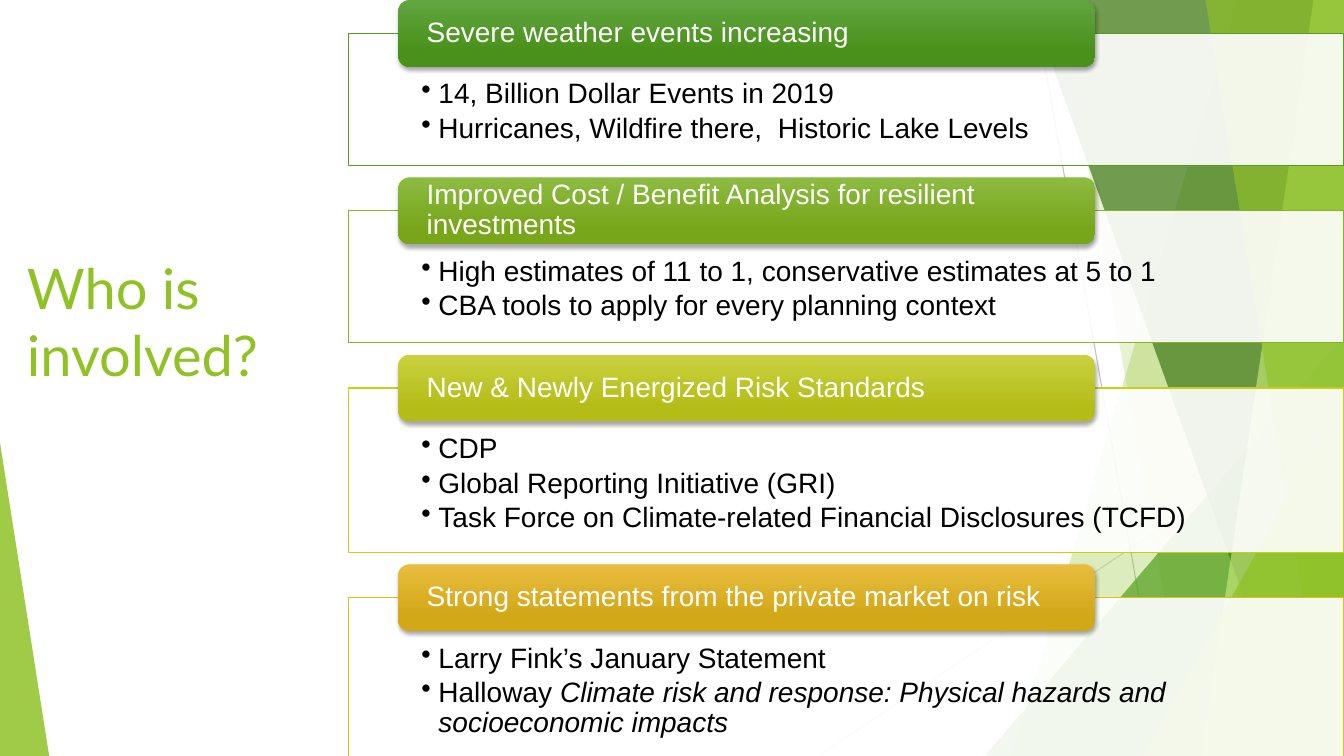
from dataclasses import dataclass

from lxml.etree import SubElement
from pptx import Presentation
from pptx.dml.color import RGBColor
from pptx.enum.shapes import MSO_CONNECTOR, MSO_SHAPE
from pptx.enum.text import MSO_ANCHOR, PP_ALIGN
from pptx.oxml.ns import qn
from pptx.util import Cm, Pt


@dataclass(frozen=True)
class Theme:
    title_font: str = "Lato"
    body_font: str = "Arial"
    title_size: int = 40
    body_size: int = 20
    green: str = "90C226"
    leaf: str = "54A021"
    forest: str = "3F7819"
    lime: str = "C0E474"
    white: str = "FFFFFF"
    black: str = "000000"
    grey: str = "BFBFBF"
    pale_grey: str = "D9D9D9"


THEME = Theme()
SLIDE_WIDTH, SLIDE_HEIGHT = 33.87, 19.05

# Topic: heading, bullets (plain text, italic text), body height in cm,
# border colour, heading gradient from top to bottom
TOPICS = [
    ("Severe weather events increasing",
     [("14, Billion Dollar Events in 2019", ""),
      ("Hurricanes, Wildfire there,  Historic Lake Levels", "")],
     3.33, "52A01E", ("61A540", "4A911B")),
    ("Improved Cost / Benefit Analysis for resilient investments",
     [("High estimates of 11 to 1, conservative estimates at 5 to 1", ""),
      ("CBA tools to apply for every planning context", "")],
     3.33, "84B71E", ("8CBB41", "78A61B")),
    ("New & Newly Energized Risk Standards",
     [("CDP", ""),
      ("Global Reporting Initiative (GRI)", ""),
      ("Task Force on Climate-related Financial Disclosures (TCFD)", "")],
     4.14, "C6D01B", ("C9D23E", "B4BD18")),
    ("Strong statements from the private market on risk",
     [("Larry Fink’s January Statement", ""),
      ("Halloway ", "Climate risk and response: Physical hazards and socioeconomic impacts")],
     4.04, "E7B91A", ("E8BC3E", "D2A817")),
]


def color(value):
    return RGBColor.from_string(value)


def fill_solid(shape, value, opacity=100):
    shape.shadow.inherit = False
    shape.fill.solid()
    shape.fill.fore_color.rgb = color(value)
    if opacity < 100:
        solid = shape._element.spPr.find(qn("a:solidFill"))
        SubElement(solid[0], qn("a:alpha"), val=str(opacity * 1000))


def format_paragraph(paragraph, font_name, size, value):
    paragraph.alignment = PP_ALIGN.LEFT
    paragraph.font.name = font_name
    paragraph.font.size = Pt(size)
    paragraph.font.color.rgb = color(value)


def set_text_frame(shape, anchor, sides, top=0, bottom=0):
    frame = shape.text_frame
    frame.word_wrap = True
    frame.vertical_anchor = anchor
    frame.margin_left = frame.margin_right = Cm(sides)
    frame.margin_top, frame.margin_bottom = Cm(top), Cm(bottom)
    return frame


# Background facets
def add_thin_line(slide, start, end, value):
    line = slide.shapes.add_connector(
        MSO_CONNECTOR.STRAIGHT, *(Cm(length) for length in start + end))
    line.line.color.rgb = color(value)
    line.line.width = Pt(0.75)
    SubElement(line._element.spPr, qn("a:effectLst"))


def add_facet(slide, top_x, bottom_x, value, opacity):
    """Full-height facet between a slanted edge and the right slide edge."""
    builder = slide.shapes.build_freeform(Cm(top_x), 0, scale=1.0)
    builder.add_line_segments([
        (Cm(SLIDE_WIDTH), 0),
        (Cm(SLIDE_WIDTH), Cm(SLIDE_HEIGHT)),
        (Cm(bottom_x), Cm(SLIDE_HEIGHT)),
    ], close=True)
    shape = builder.convert_to_shape()
    fill_solid(shape, value, opacity)
    shape.line.fill.background()


def add_corner(slide, width, height, apex, value, opacity):
    """Triangle in a bottom corner: apex 0 is the left one, 1 the right one."""
    left = apex * (SLIDE_WIDTH - width)
    shape = slide.shapes.add_shape(
        MSO_SHAPE.ISOSCELES_TRIANGLE, Cm(left), Cm(SLIDE_HEIGHT - height),
        Cm(width), Cm(height))
    shape.adjustments[0] = apex
    fill_solid(shape, value, opacity)
    shape.line.fill.background()


def add_background(slide):
    add_thin_line(slide, (26.04, 0), (29.41, SLIDE_HEIGHT), THEME.grey)
    add_thin_line(slide, (SLIDE_WIDTH, 10.24), (20.62, SLIDE_HEIGHT), THEME.pale_grey)
    add_facet(slide, 31.19, 25.5, THEME.green, 30)
    add_facet(slide, 26.67, 30.05, THEME.green, 20)
    add_corner(slide, 9.05, 10.59, 1, THEME.leaf, 72)
    add_facet(slide, 25.93, 32.79, THEME.forest, 70)
    add_facet(slide, 33.1, 30.28, THEME.lime, 70)
    add_facet(slide, 30.38, 33.48, THEME.green, 65)
    add_corner(slide, 5.07, 9.07, 1, THEME.green, 80)
    add_corner(slide, 1.24, 7.9, 0, THEME.green, 85)


# Title
def place_title(slide, left, top, width, height):
    title = slide.shapes.title
    title.left, title.top = Cm(left), Cm(top)
    title.width, title.height = Cm(width), Cm(height)
    frame = set_text_frame(title, MSO_ANCHOR.TOP, 0.25, 0.13, 0.13)
    frame.text = "Who is involved?"
    format_paragraph(frame.paragraphs[0], THEME.title_font, THEME.title_size, THEME.green)


# Topic body: bordered box with bullets
def add_bullet(paragraph, plain, italic):
    properties = paragraph._p.get_or_add_pPr()
    properties.set("marL", str(Cm(0.43)))
    properties.set("indent", str(-Cm(0.43)))
    bullet_color = SubElement(properties, qn("a:buClr"))
    SubElement(bullet_color, qn("a:srgbClr"), val=THEME.black)
    SubElement(properties, qn("a:buChar"), char="•")
    paragraph.line_spacing = 0.9
    format_paragraph(paragraph, THEME.body_font, THEME.body_size, THEME.black)
    paragraph.add_run().text = plain
    if italic:
        run = paragraph.add_run()
        run.text = italic
        run.font.italic = True


def add_body(slide, left, top, width, height, bullets, border):
    body = slide.shapes.add_shape(
        MSO_SHAPE.RECTANGLE, Cm(left), Cm(top), Cm(width), Cm(height))
    fill_solid(body, THEME.white, 90)
    body.line.color.rgb = color(border)
    body.line.width = Pt(1)
    frame = set_text_frame(body, MSO_ANCHOR.TOP, 1.83, 1.17, 0.41)
    for index, (plain, italic) in enumerate(bullets):
        paragraph = frame.add_paragraph() if index else frame.paragraphs[0]
        add_bullet(paragraph, plain, italic)
        if index:
            paragraph.space_before = Pt(3)


# Topic heading: rounded bar with gradient and soft shadow
def add_heading(slide, left, top, width, height, text, gradient):
    heading = slide.shapes.add_shape(
        MSO_SHAPE.ROUNDED_RECTANGLE, Cm(left), Cm(top), Cm(width), Cm(height))
    heading.line.fill.background()
    heading.fill.gradient()
    heading.fill.gradient_angle = 270
    for stop, position, value in zip(heading.fill.gradient_stops, (0, 0.78), gradient):
        stop.position = position
        stop.color.rgb = color(value)
    heading.shadow.inherit = False
    effects = heading._element.spPr.find(qn("a:effectLst"))
    shadow = SubElement(effects, qn("a:outerShdw"), blurRad=str(Pt(3)),
                        dist=str(Pt(2)), dir="5400000", rotWithShape="0")
    shadow_color = SubElement(shadow, qn("a:srgbClr"), val=THEME.black)
    SubElement(shadow_color, qn("a:alpha"), val="35000")
    frame = set_text_frame(heading, MSO_ANCHOR.MIDDLE, 0.63)
    frame.text = text
    frame.paragraphs[0].line_spacing = 0.9
    format_paragraph(frame.paragraphs[0], THEME.body_font, THEME.body_size, THEME.white)


def add_topics(slide, left, top, width):
    heading_height, gap = 1.68, 1.14
    body_top = top + heading_height / 2
    for text, bullets, height, border, gradient in TOPICS:
        add_body(slide, left, body_top, width, height, bullets, border)
        add_heading(slide, left + 1.25, body_top - heading_height / 2,
                    0.7 * width, heading_height, text, gradient)
        body_top += height + gap


def main():
    presentation = Presentation()
    presentation.slide_width, presentation.slide_height = Cm(SLIDE_WIDTH), Cm(SLIDE_HEIGHT)
    slide = presentation.slides.add_slide(presentation.slide_layouts[5])
    add_background(slide)
    place_title(slide, 0.43, 6.25, 7.06, 2.39)
    add_topics(slide, 8.79, 0, SLIDE_WIDTH - 8.79)
    presentation.save("out.pptx")


if __name__ == "__main__":
    main()
